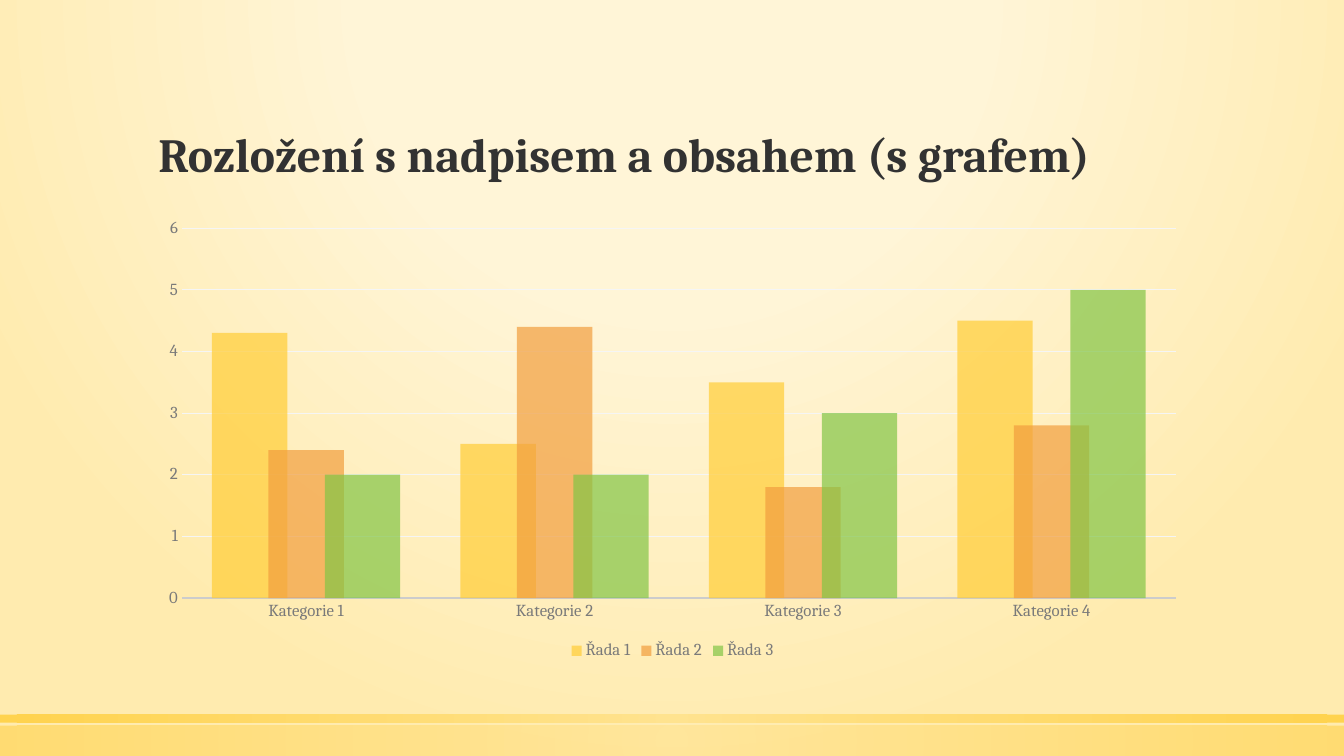
"""Build a title slide with a clustered column chart on a warm gradient."""
from lxml import etree
from pptx import Presentation
from pptx.chart.data import CategoryChartData
from pptx.dml.color import RGBColor
from pptx.enum.chart import XL_CHART_TYPE as Kind
from pptx.enum.chart import XL_LEGEND_POSITION as Place
from pptx.enum.chart import XL_TICK_MARK as Tick
from pptx.enum.shapes import MSO_SHAPE as Shape
from pptx.enum.text import MSO_ANCHOR as Anchor
from pptx.enum.text import MSO_AUTO_SIZE as Fit
from pptx.enum.text import PP_ALIGN as Align
from pptx.oxml.ns import qn
from pptx.util import Inches, Pt

FONT = "Cambria"
TITLE = "Rozložení s nadpisem a obsahem (s grafem)"
CATS = ["Kategorie 1", "Kategorie 2", "Kategorie 3", "Kategorie 4"]
ROWS = [
    ("Řada 1", (4.3, 2.5, 3.5, 4.5), "FFCD36"),
    ("Řada 2", (2.4, 4.4, 1.8, 2.8), "F29E3E"),
    ("Řada 3", (2, 2, 3, 5), "83C546"),
]
BACK = [(0, "FFF5D7", 59), (40, "FFF5D7", 66), (100, "FFEBAF", 100)]
BANDS = [(7.2, 0.3, 50), (7.09, 0.08, 80)]
WIDE, HIGH = 13.33, 7.5
LEFT, SPAN = 1.47, 10.4


def tint(color, code):
    color.rgb = RGBColor.from_string(code)


def style(font, size, code, bold=False):
    font.name, font.size, font.bold = FONT, Pt(size), bold
    tint(font.color, code)


def fade(node, alpha):
    for color in node.iter(qn("a:srgbClr")):
        etree.SubElement(color, qn("a:alpha")).set("val", str(alpha * 1000))


def glow(fill, root, stops, top, base):
    """Turn the gradient under root into a circular one."""
    fill.gradient()
    grad = next(root.iter(qn("a:gradFill")))
    for child in list(grad):
        grad.remove(child)
    items = etree.SubElement(grad, qn("a:gsLst"))
    for pos, code, alpha in stops:
        stop = etree.SubElement(items, qn("a:gs"), pos=str(pos * 1000))
        etree.SubElement(stop, qn("a:srgbClr"), val=code)
        if alpha < 100:
            fade(stop, alpha)
    ring = etree.SubElement(grad, qn("a:path"))
    ring.set("path", "circle")
    sides = {"l": 50, "t": top, "r": 50, "b": base}
    etree.SubElement(ring, qn("a:fillToRect"),
                     {side: str(val * 1000) for side, val in sides.items()})


def add_bands(slide):
    for top, high, alpha in BANDS:
        band = slide.shapes.add_shape(
            Shape.RECTANGLE, 0, Inches(top), Inches(WIDE), Inches(high))
        band.shadow.inherit = False
        band.line.fill.background()
        stops = [(0, "FFE186", alpha), (100, "FFCD36", alpha)]
        glow(band.fill, band.element, stops, 50, 50)


def set_title(slide):
    title = slide.shapes.title
    title.left, title.top = Inches(LEFT), Inches(0.51)
    title.width, title.height = Inches(SPAN), Inches(1.35)
    frame = title.text_frame
    frame.text = TITLE
    frame.word_wrap, frame.auto_size = True, Fit.NONE
    frame.vertical_anchor = Anchor.BOTTOM
    para = frame.paragraphs[0]
    para.alignment, para.line_spacing = Align.LEFT, 0.9
    style(para.runs[0].font, 34, "323232", True)


def add_graph(slide):
    data = CategoryChartData()
    data.categories = CATS
    for name, vals, code in ROWS:
        data.add_series(name, vals)
    chart = slide.shapes.add_chart(
        Kind.COLUMN_CLUSTERED, Inches(LEFT), Inches(2.08),
        Inches(SPAN), Inches(4.51), data).chart
    style(chart.font, 10, "323232")
    chart.has_title = False
    chart.has_legend = True
    chart.legend.position = Place.BOTTOM
    chart.legend.include_in_layout = False
    style(chart.legend.font, 12, "7A7A7A")

    plot = chart.plots[0]
    plot.vary_by_categories = False
    plot.gap_width, plot.overlap = 80, 25
    for series, (name, vals, code) in zip(plot.series, ROWS):
        series.format.fill.solid()
        tint(series.format.fill.fore_color, code)
        fade(series._element, 70)

    cat, val = chart.category_axis, chart.value_axis
    for axis in (cat, val):
        axis.major_tick_mark = axis.minor_tick_mark = Tick.NONE
        style(axis.tick_labels.font, 12, "7A7A7A")
    cat.format.line.width = Pt(1.25)
    tint(cat.format.line.color, "CCCCCC")
    val.format.line.fill.background()
    val.minimum_scale, val.maximum_scale, val.major_unit = 0, 6, 1
    grid = val.major_gridlines.format.line
    grid.width = Pt(0.75)
    tint(grid.color, "F5F5F5")


def main():
    deck = Presentation()
    deck.slide_width, deck.slide_height = Inches(WIDE), Inches(HIGH)
    slide = deck.slides.add_slide(deck.slide_layouts[5])
    glow(slide.background.fill, slide.element, BACK, -80, 180)
    add_bands(slide)
    set_title(slide)
    add_graph(slide)
    deck.save("out.pptx")


if __name__ == "__main__":
    main()
